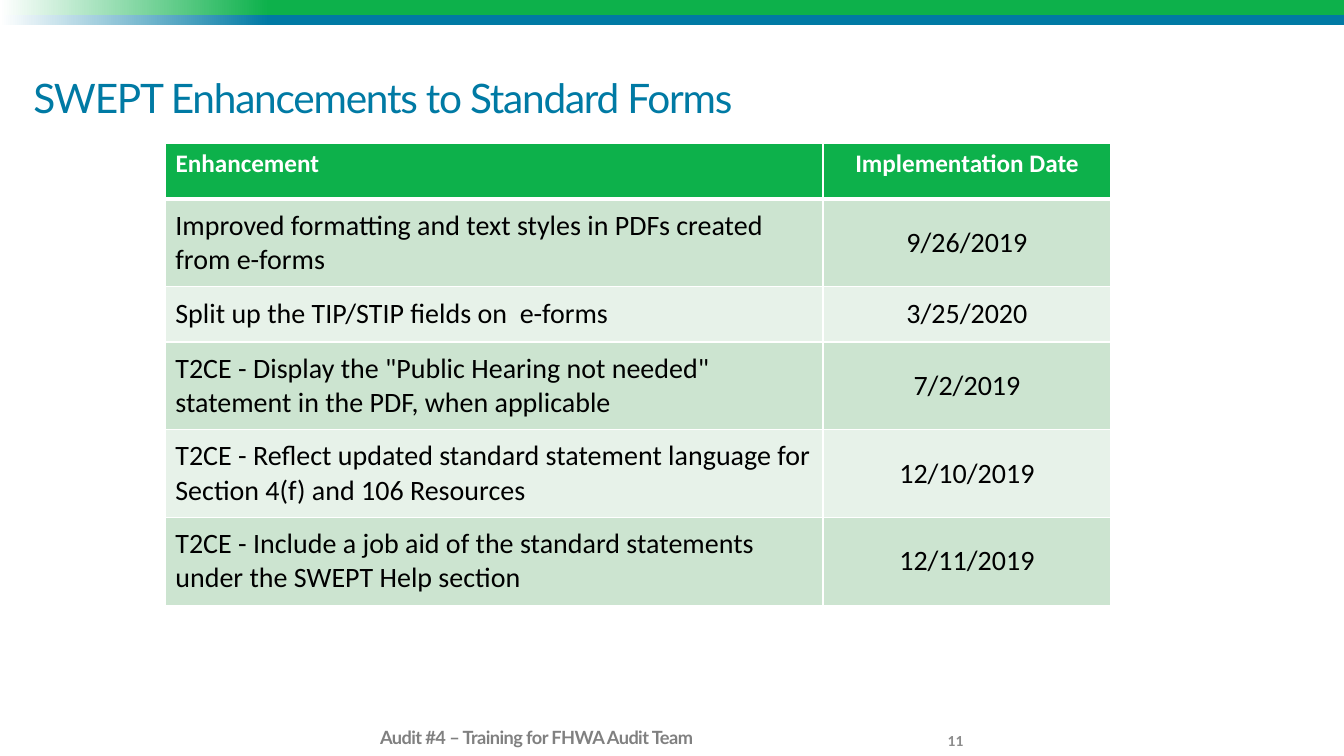
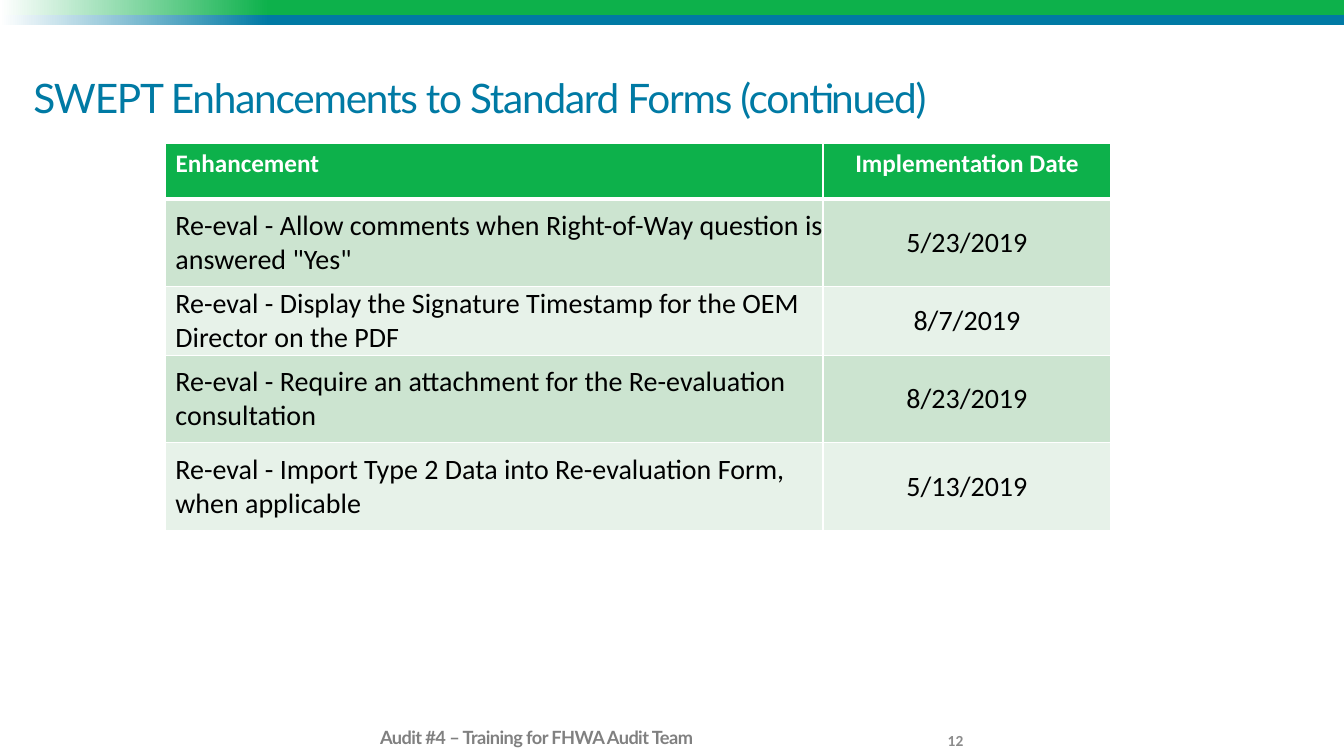
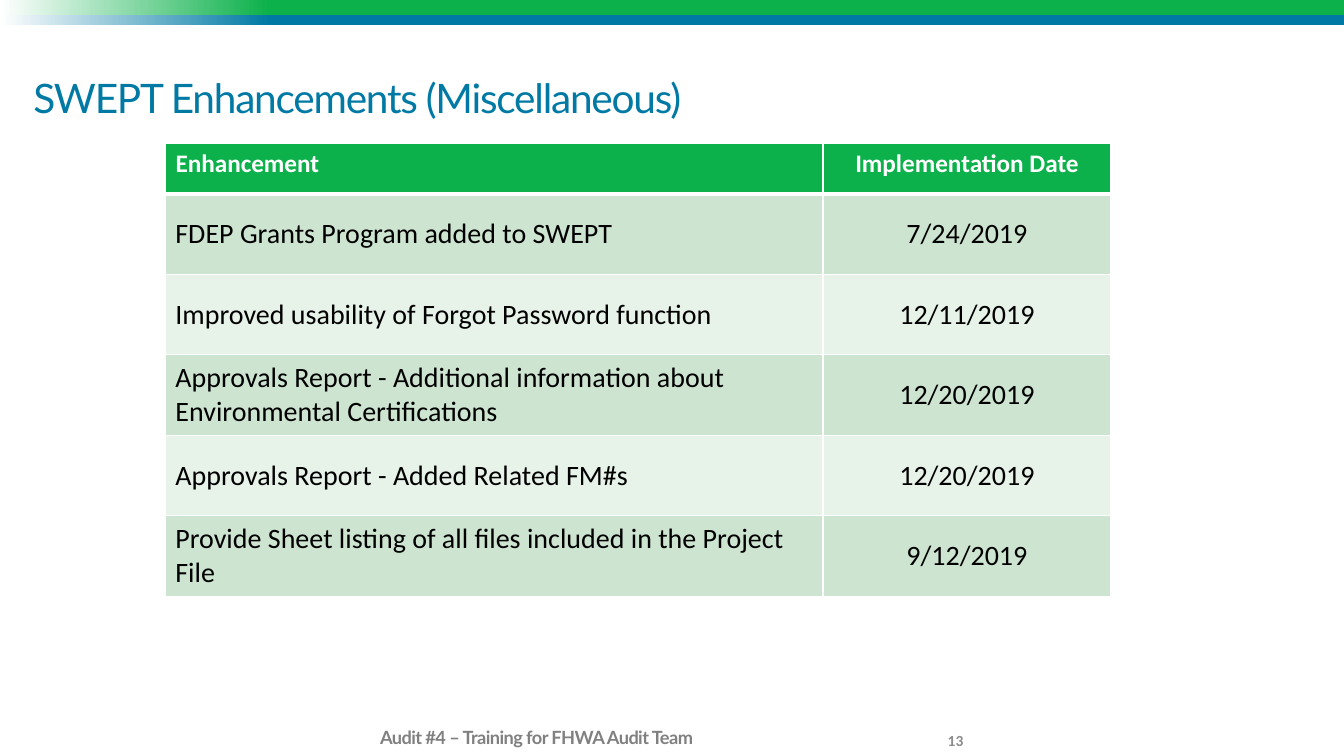
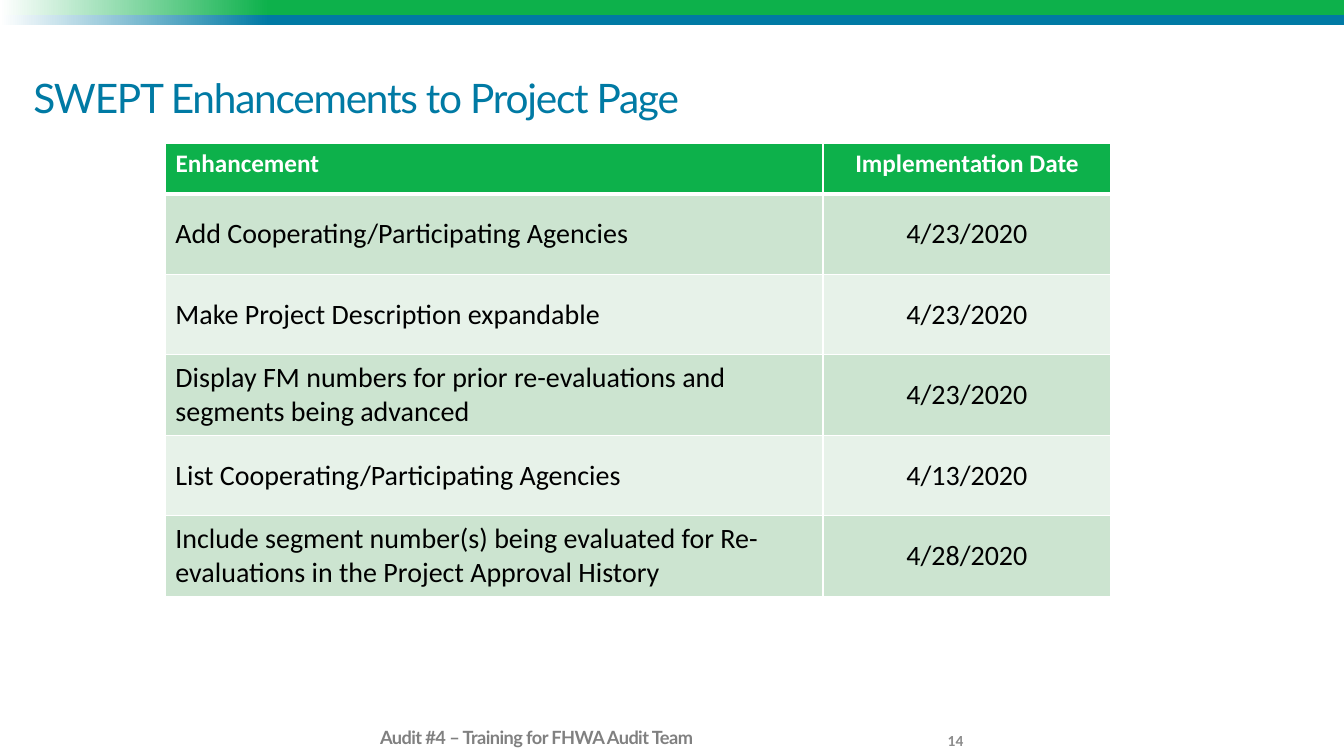
from lxml import etree
from pptx import Presentation
from pptx import util as u
from pptx.dml.color import RGBColor
from pptx.enum import shapes, text
from pptx.oxml import ns

GREEN = RGBColor(0x0D, 0xB1, 0x4B)
BLUE = RGBColor(0x00, 0x7A, 0xA4)
WHITE = RGBColor(0xFF, 0xFF, 0xFF)
BLACK = RGBColor(0x00, 0x00, 0x00)
FOOTER_GRAY = RGBColor(0x80, 0x80, 0x80)
NUMBER_GRAY = RGBColor(0x8C, 0x8C, 0x8C)
BAND_GREENS = (RGBColor(0xCC, 0xE4, 0xD0), RGBColor(0xE7, 0xF2, 0xE9))

HEADING_FONT = "Lato"
BODY_FONT = "Calibri"
FOOTER = "Audit #4 – Training for FHWA Audit Team"
HEADERS = ("Enhancement", "Implementation Date")
COLUMN_WIDTHS = (16.57, 7.26)
FIRST_NUMBER = 11

SHORT_ROW, TALL_ROW = 1.4, 2.21
EVEN_ROWS = [1.27] + [2.03] * 5

SLIDES = [
    (
        "SWEPT Enhancements to Standard Forms",
        [SHORT_ROW, TALL_ROW, SHORT_ROW, TALL_ROW, TALL_ROW, TALL_ROW],
        [
            ("Improved formatting and text styles in PDFs created from e-forms", "9/26/2019"),
            ("Split up the TIP/STIP fields on  e-forms", "3/25/2020"),
            ('T2CE - Display the "Public Hearing not needed" statement in the PDF, when applicable', "7/2/2019"),
            ("T2CE - Reflect updated standard statement language for Section 4(f) and 106 Resources", "12/10/2019"),
            ("T2CE - Include a job aid of the standard statements under the SWEPT Help section", "12/11/2019"),
        ],
    ),
    (
        "SWEPT Enhancements to Standard Forms (continued)",
        [SHORT_ROW, TALL_ROW, SHORT_ROW, TALL_ROW, TALL_ROW],
        [
            ('Re-eval - Allow comments when Right-of-Way question is answered "Yes"', "5/23/2019"),
            ("Re-eval - Display the Signature Timestamp for the OEM Director on the PDF", "8/7/2019"),
            ("Re-eval - Require an attachment for the Re-evaluation consultation", "8/23/2019"),
            ("Re-eval - Import Type 2 Data into Re-evaluation Form, when applicable", "5/13/2019"),
        ],
    ),
    (
        "SWEPT Enhancements (Miscellaneous)",
        EVEN_ROWS,
        [
            ("FDEP Grants Program added to SWEPT", "7/24/2019"),
            ("Improved usability of Forgot Password function", "12/11/2019"),
            ("Approvals Report - Additional information about Environmental Certifications", "12/20/2019"),
            ("Approvals Report - Added Related FM#s", "12/20/2019"),
            ("Provide Sheet listing of all files included in the Project File", "9/12/2019"),
        ],
    ),
    (
        "SWEPT Enhancements to Project Page",
        EVEN_ROWS,
        [
            ("Add Cooperating/Participating Agencies", "4/23/2020"),
            ("Make Project Description expandable", "4/23/2020"),
            ("Display FM numbers for prior re-evaluations and segments being advanced", "4/23/2020"),
            ("List Cooperating/Participating Agencies", "4/13/2020"),
            ("Include segment number(s) being evaluated for Re-evaluations in the Project Approval History", "4/28/2020"),
        ],
    ),
]


class Deck:
    def __init__(self):
        self.presentation = Presentation()
        self.presentation.slide_width = u.Cm(33.87)
        self.presentation.slide_height = u.Cm(19.05)
        self.slide = None

    def add_slide(self, title, number):
        layout = self.presentation.slide_layouts[5]
        self.slide = self.presentation.slides.add_slide(layout)
        self.band(0, 0.38, GREEN)
        self.band(0.38, 0.25, BLUE)
        self.footer()
        self.title(title)
        self.number(number)

    def band(self, top, height, color):
        band = self.slide.shapes.add_shape(
            shapes.MSO_SHAPE.RECTANGLE, 0, u.Cm(top), self.presentation.slide_width, u.Cm(height))
        band.shadow.inherit = False
        band.line.fill.background()
        band.fill.gradient()
        band.fill.gradient_angle = 0
        for stop, position, shade in zip(band.fill.gradient_stops, (0, 0.2), (WHITE, color)):
            stop.position = position
            stop.color.rgb = shade

    def add_text(self, paragraph, content, font_name, size, color, bold=False, spacing=0):
        run = paragraph.add_run()
        run.text = content
        run.font.name = font_name
        run.font.size = u.Pt(size)
        run.font.bold = bold
        run.font.color.rgb = color
        if spacing:
            run.font._element.set("spc", str(round(spacing * 100)))

    def frame(self, shape):
        frame = shape.text_frame
        frame.word_wrap = True
        frame.auto_size = text.MSO_AUTO_SIZE.NONE
        frame.vertical_anchor = text.MSO_ANCHOR.BOTTOM
        frame.margin_left = frame.margin_right = frame.margin_top = frame.margin_bottom = 0
        return frame.paragraphs[0]

    def text_box(self, left, top, width, height):
        return self.frame(self.slide.shapes.add_textbox(u.Cm(left), u.Cm(top), u.Cm(width), u.Cm(height)))

    def title(self, content):
        title = self.slide.shapes.title
        title.left, title.top = u.Cm(0.84), u.Cm(0.76)
        title.width, title.height = u.Cm(30.48), u.Cm(2.29)
        paragraph = self.frame(title)
        paragraph.alignment = text.PP_ALIGN.LEFT
        paragraph.line_spacing = 0.8
        self.add_text(paragraph, content, HEADING_FONT, 29, BLUE, spacing=-0.9)

    def footer(self):
        paragraph = self.text_box(9.58, 17.65, 13.56, 1.19)
        paragraph.line_spacing = 0.8
        paragraph.space_after = u.Pt(12)
        self.add_text(paragraph, FOOTER, HEADING_FONT, 13, FOOTER_GRAY, bold=True, spacing=-0.4)

    def number(self, number):
        paragraph = self.text_box(22.3, 17.86, 1.98, 1.02)
        paragraph.alignment = text.PP_ALIGN.RIGHT
        self.add_text(paragraph, str(number), BODY_FONT, 11, NUMBER_GRAY, bold=True)

    def border(self, cell, side, points):
        line = etree.SubElement(cell._tc.get_or_add_tcPr(), ns.qn("a:ln" + side), w=str(u.Pt(points)))
        fill = etree.SubElement(line, ns.qn("a:solidFill"))
        etree.SubElement(fill, ns.qn("a:srgbClr"), val=str(WHITE))

    def cell(self, cell, content, row, column):
        is_header = row == 0
        for side in "LRTB":
            under_header = (row, side) in ((0, "B"), (1, "T"))
            self.border(cell, side, 3 if under_header else 1)
        cell.fill.solid()
        cell.fill.fore_color.rgb = GREEN if is_header else BAND_GREENS[(row - 1) % 2]
        paragraph = cell.text_frame.paragraphs[0]
        if column == 1:
            paragraph.alignment = text.PP_ALIGN.CENTER
        if is_header:
            self.add_text(paragraph, content, BODY_FONT, 18, WHITE, bold=True)
            return
        cell.vertical_anchor = text.MSO_ANCHOR.MIDDLE
        cell.margin_left = u.Cm(0.25 if column == 0 else 0)
        cell.margin_right = cell.margin_top = cell.margin_bottom = 0
        self.add_text(paragraph, content, BODY_FONT, 20, BLACK)

    def table(self, heights, entries):
        rows = [HEADERS] + entries
        table = self.slide.shapes.add_table(
            len(rows), len(HEADERS), u.Cm(4.17), u.Cm(3.61),
            u.Cm(sum(COLUMN_WIDTHS)), u.Cm(sum(heights))).table
        table.horz_banding = False
        for column, width in zip(table.columns, COLUMN_WIDTHS):
            column.width = u.Cm(width)
        for row, (height, contents) in enumerate(zip(heights, rows)):
            table.rows[row].height = u.Cm(height)
            for column, content in enumerate(contents):
                self.cell(table.cell(row, column), content, row, column)


def main():
    deck = Deck()
    for number, (title, heights, entries) in enumerate(SLIDES, FIRST_NUMBER):
        deck.add_slide(title, number)
        deck.table(heights, entries)
    deck.presentation.save("out.pptx")


if __name__ == "__main__":
    main()
